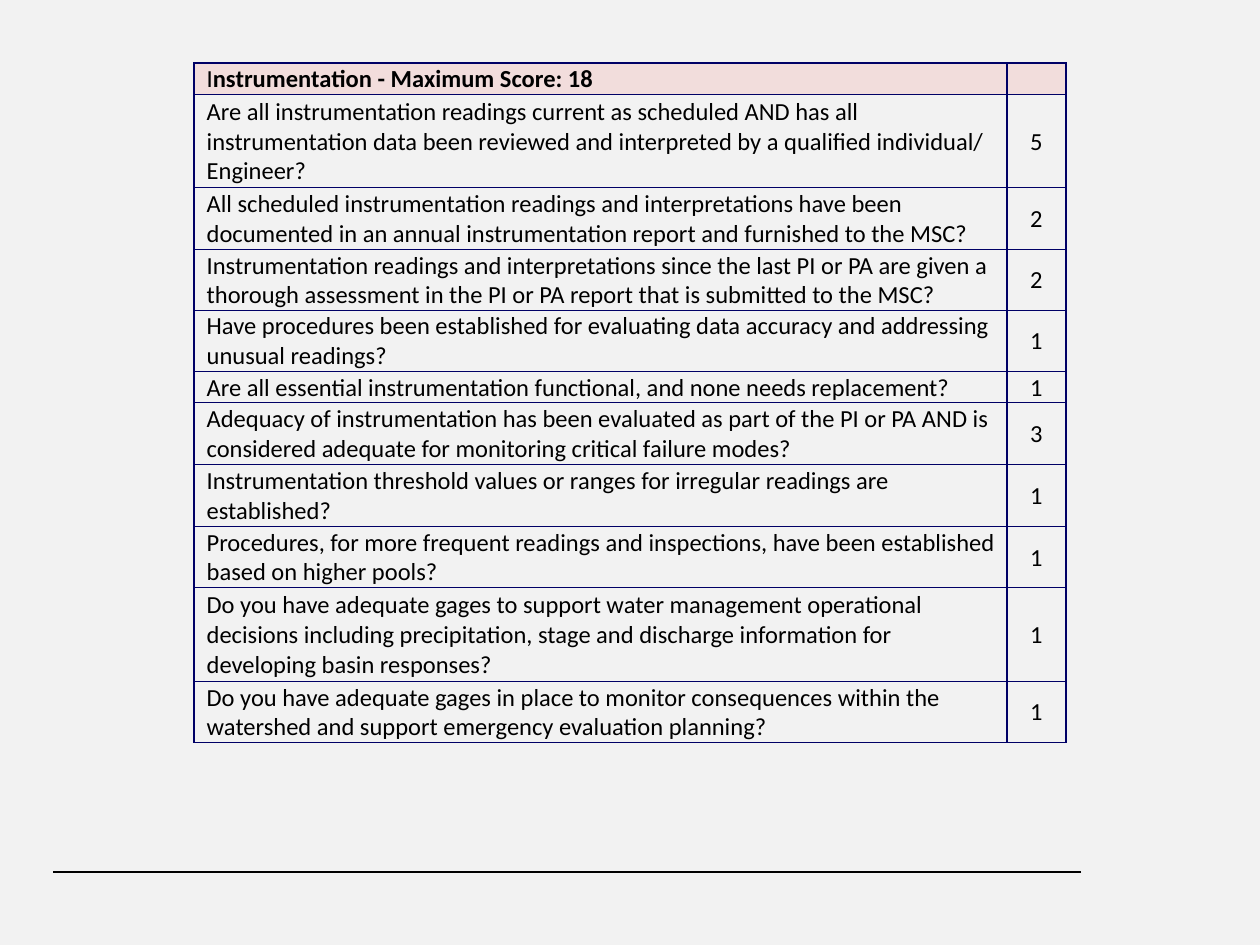
"""Build the instrumentation scoring slide."""
from typing import NamedTuple

from lxml import etree
from pptx import Presentation
from pptx.dml.color import RGBColor
from pptx.enum.shapes import MSO_CONNECTOR
from pptx.enum.text import MSO_ANCHOR, PP_ALIGN
from pptx.oxml.ns import qn
from pptx.util import Inches, Pt

STRAIGHT = MSO_CONNECTOR.STRAIGHT
MIDDLE = MSO_ANCHOR.MIDDLE
LEFT, CENTER = PP_ALIGN.LEFT, PP_ALIGN.CENTER

COLORS = {"background": "F2F2F2", "header": "F2DDDC", "border": "000066", "text": "000000"}
FONT_NAME = "Calibri"
FONT_SIZE = 14
COLUMN_WIDTHS = (6.45, 0.47)
HEADER_HEIGHT = 0.25
HEADER_PARTS = (("I", False), ("nstrumentation - Maximum Score: 18", True))


class Criterion(NamedTuple):
    question: str
    score: int
    height: float


CRITERIA = (
    Criterion("Are all instrumentation readings current as scheduled AND has all instrumentation "
              "data been reviewed and interpreted by a qualified individual/ Engineer?", 5, 0.74),
    Criterion("All scheduled instrumentation readings and interpretations have been documented "
              "in an annual instrumentation report and furnished to the MSC?", 2, 0.49),
    Criterion("Instrumentation readings and interpretations since the last PI or PA are given a "
              "thorough assessment in the PI or PA report that is submitted to the MSC?", 2, 0.48),
    Criterion("Have procedures been established for evaluating data accuracy and addressing "
              "unusual readings?", 1, 0.48),
    Criterion("Are all essential instrumentation functional, and none needs replacement?", 1, 0.25),
    Criterion("Adequacy of instrumentation has been evaluated as part of the PI or PA AND is "
              "considered adequate for monitoring critical failure modes?", 3, 0.49),
    Criterion("Instrumentation threshold values or ranges for irregular readings are "
              "established?", 1, 0.49),
    Criterion("Procedures, for more frequent readings and inspections, have been established "
              "based on higher pools?", 1, 0.49),
    Criterion("Do you have adequate gages to support water management operational decisions "
              "including precipitation, stage and discharge information for developing basin "
              "responses?", 1, 0.74),
    Criterion("Do you have adequate gages in place to monitor consequences within the watershed "
              "and support emergency evaluation planning?", 1, 0.49),
)


def color(name: str) -> RGBColor:
    return RGBColor.from_string(COLORS[name])


def set_borders(cell, top: float, bottom: float) -> None:
    properties = cell._tc.get_or_add_tcPr()
    for side, width in (("L", 1), ("R", 1), ("T", top), ("B", bottom)):
        line = etree.SubElement(properties, qn(f"a:ln{side}"), w=str(Pt(width)))
        fill = etree.SubElement(line, qn("a:solidFill"))
        etree.SubElement(fill, qn("a:srgbClr"), val=COLORS["border"])


def format_cell(cell, alignment: PP_ALIGN, top: float, bottom: float) -> None:
    cell.vertical_anchor = MIDDLE
    cell.margin_left = Inches(0.1 if alignment == LEFT else 0.01)
    cell.margin_top = cell.margin_right = Inches(0.01)
    cell.margin_bottom = 0
    set_borders(cell, top, bottom)
    cell.fill.background()
    paragraph = cell.text_frame.paragraphs[0]
    paragraph.alignment = alignment
    for run in paragraph.runs:
        run.font.name = FONT_NAME
        run.font.size = Pt(FONT_SIZE)
        run.font.color.rgb = color("text")
    if not paragraph.runs:
        paragraph._p.get_or_add_endParaRPr().set("sz", str(FONT_SIZE * 100))


def fill_header(table) -> None:
    table.rows[0].height = Inches(HEADER_HEIGHT)
    title_paragraph = table.cell(0, 0).text_frame.paragraphs[0]
    for text, bold in HEADER_PARTS:
        run = title_paragraph.add_run()
        run.text = text
        run.font.bold = bold
    for column, alignment in enumerate((LEFT, CENTER)):
        cell = table.cell(0, column)
        format_cell(cell, alignment, 1, 1)
        cell.fill.solid()
        cell.fill.fore_color.rgb = color("header")


def fill_criterion(table, row: int, criterion: Criterion) -> None:
    table.rows[row].height = Inches(criterion.height)
    values = ((criterion.question, LEFT), (str(criterion.score), CENTER))
    for column, (text, alignment) in enumerate(values):
        cell = table.cell(row, column)
        cell.text_frame.text = text
        format_cell(cell, alignment, 1 if row == 1 else 0.5, 0.5)


def add_score_table(slide) -> None:
    height = HEADER_HEIGHT + sum(criterion.height for criterion in CRITERIA)
    table = slide.shapes.add_table(
        len(CRITERIA) + 1, len(COLUMN_WIDTHS), Inches(1.54), Inches(0.5),
        Inches(sum(COLUMN_WIDTHS)), Inches(height)).table
    table.first_row = table.horz_banding = False
    for column, width in zip(table.columns, COLUMN_WIDTHS):
        column.width = Inches(width)
    fill_header(table)
    for row, criterion in enumerate(CRITERIA, start=1):
        fill_criterion(table, row, criterion)


def add_footer_line(slide) -> None:
    line = slide.shapes.add_connector(
        STRAIGHT, Inches(8.58), Inches(6.92), Inches(0.42), Inches(6.92))
    line.line.color.rgb = color("text")
    line.line.width = Pt(0.75)
    etree.SubElement(line._element.spPr, qn("a:effectLst"))


def main() -> None:
    presentation = Presentation()
    presentation.slide_width, presentation.slide_height = Inches(10), Inches(7.5)
    slide = presentation.slides.add_slide(presentation.slide_layouts[6])
    slide.background.fill.solid()
    slide.background.fill.fore_color.rgb = color("background")
    add_footer_line(slide)
    add_score_table(slide)
    presentation.save("out.pptx")


if __name__ == "__main__":
    main()
